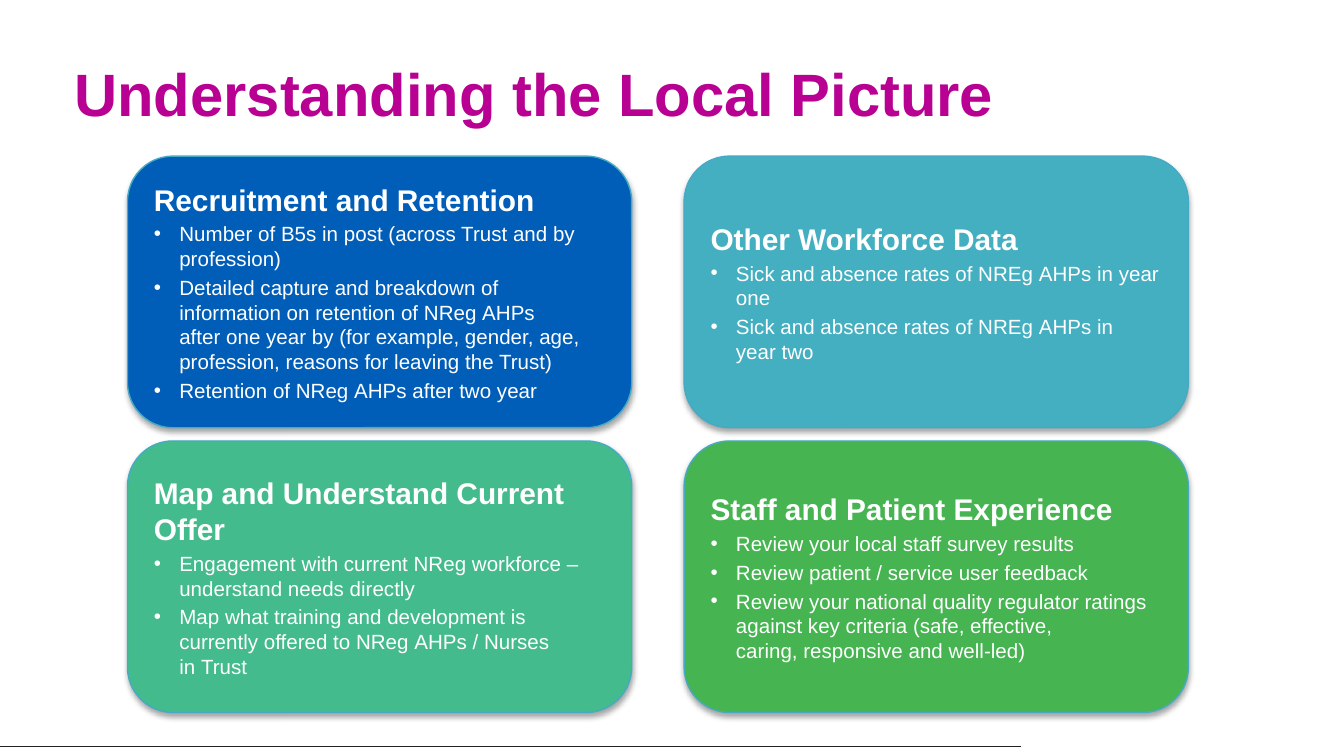
from dataclasses import dataclass

import lxml.etree
import pptx
import pptx.dml.color
import pptx.enum.shapes
import pptx.enum.text
import pptx.oxml
import pptx.oxml.ns
import pptx.util

Cm = pptx.util.Cm
Pt = pptx.util.Pt
qn = pptx.oxml.ns.qn
NO_BREAK_SPACE = chr(160)


@dataclass(frozen=True)
class Theme:
    font: str = "Arial"
    title: str = "B80093"
    text: str = "FFFFFF"
    rule: str = "212121"
    outline: str = "46AAC5"
    shadow: str = "000000"
    blue: str = "005EB8"
    teal: str = "43AFC0"
    mint: str = "43BB8D"
    green: str = "45B451"
    title_size: float = 32
    heading_size: float = 16
    body_size: float = 11
    line_width: float = 0.75


class SlideBuilder:
    def __init__(self, prs, theme):
        self.theme = theme
        self.s = prs.slides.add_slide(prs.slide_layouts[5])

    def color(self, value):
        return pptx.dml.color.RGBColor.from_string(value)

    def format_runs(self, p, size, color, bold):
        p.alignment = pptx.enum.text.PP_ALIGN.LEFT
        for r in p.runs:
            r.font.name = self.theme.font
            r.font.size = Pt(size)
            r.font.bold = bold
            r.font.color.rgb = self.color(color)

    def outline(self, line, color):
        line.color.rgb = self.color(color)
        line.width = Pt(self.theme.line_width)

    def rule(self, x1, x2, y):
        c = self.s.shapes.add_connector(
            pptx.enum.shapes.MSO_CONNECTOR.STRAIGHT, Cm(x1), Cm(y), Cm(x2), Cm(y))
        self.outline(c.line, self.theme.rule)
        lxml.etree.SubElement(c._element.spPr, qn("a:effectLst"))

    def title(self, text, x, y, w, h):
        sp = self.s.shapes.title
        sp.left, sp.top, sp.width, sp.height = Cm(x), Cm(y), Cm(w), Cm(h)
        tf = sp.text_frame
        tf.text = text
        tf.vertical_anchor = pptx.enum.text.MSO_ANCHOR.MIDDLE
        self.format_runs(tf.paragraphs[0], self.theme.title_size, self.theme.title, True)

    def shadow(self, sp):
        sp.shadow.inherit = False
        effects = sp._element.spPr.find(qn("a:effectLst"))
        outer = lxml.etree.SubElement(
            effects, qn("a:outerShdw"), blurRad=str(Pt(3.1)), dist=str(Pt(1.8)),
            dir="5400000", rotWithShape="0")
        tone = lxml.etree.SubElement(outer, qn("a:srgbClr"), val=self.theme.shadow)
        lxml.etree.SubElement(tone, qn("a:alpha"), val="35000")

    def bullet(self, p):
        p.space_before = Pt(2.2)
        pPr = p._p.get_or_add_pPr()
        pPr.set("marL", str(Cm(0.48)))
        pPr.set("indent", str(-Cm(0.48)))
        lxml.etree.SubElement(pPr, qn("a:buFont"), typeface=self.theme.font)
        lxml.etree.SubElement(pPr, qn("a:buChar"), char="•")

    def card(self, heading, bullets, fill, x, y, w, h):
        sp = self.s.shapes.add_shape(
            pptx.enum.shapes.MSO_SHAPE.ROUNDED_RECTANGLE, Cm(x), Cm(y), Cm(w), Cm(h))
        sp.fill.solid()
        sp.fill.fore_color.rgb = self.color(fill)
        self.outline(sp.line, self.theme.outline)
        self.shadow(sp)
        tf = sp.text_frame
        tf.word_wrap = True
        tf.vertical_anchor = pptx.enum.text.MSO_ANCHOR.MIDDLE
        tf.text = heading.replace("~", NO_BREAK_SPACE)
        self.format_runs(tf.paragraphs[0], self.theme.heading_size, self.theme.text, True)
        for text in bullets:
            p = tf.add_paragraph()
            p.text = text.replace("~", NO_BREAK_SPACE)
            self.format_runs(p, self.theme.body_size, self.theme.text, False)
            self.bullet(p)


def main():
    prs = pptx.Presentation()
    prs.slide_width, prs.slide_height = Cm(25.4), Cm(14.28)
    theme = Theme()
    slide = SlideBuilder(prs, theme)
    slide.rule(19.3, 0, 14.1)
    slide.title("Understanding the Local Picture", 1.15, 0.84, 23.09, 1.83)

    cards = [
        ("Recruitment and Retention", theme.blue, [
            "Number of B5s in post (across Trust and by profession)",
            "Detailed capture and breakdown of information on retention of~NReg~AHPs "
            "after~one year~by (for example, gender, age, profession, "
            "reasons for leaving the Trust)",
            "Retention of~NReg~AHPs~after two year",
        ]),
        ("Other~Workforce Data", theme.teal, [
            "Sick and absence rates of~NREg~AHPs in year one",
            "Sick and absence rates of~NREg~AHPs in year~two",
        ]),
        ("Map and Understand Current Offer", theme.mint, [
            "Engagement~with current~NReg~workforce – understand needs directly",
            "Map what training and~development~is currently offered to~"
            "NReg~AHPs / Nurses in~Trust",
        ]),
        ("Staff and Patient Experience~", theme.green, [
            "Review your local staff survey results",
            "Review patient / service user feedback",
            "Review your national quality regulator ratings against key criteria "
            "(safe, effective, caring,~responsive and well-led)",
        ]),
    ]
    for i, (heading, fill, bullets) in enumerate(cards):
        row, col = divmod(i, 2)
        slide.card(heading, bullets, fill,
                   2.41 + col * 10.52, 2.95 + row * 5.38, 9.53, 5.13)

    prs.save("out.pptx")


if __name__ == "__main__":
    main()
